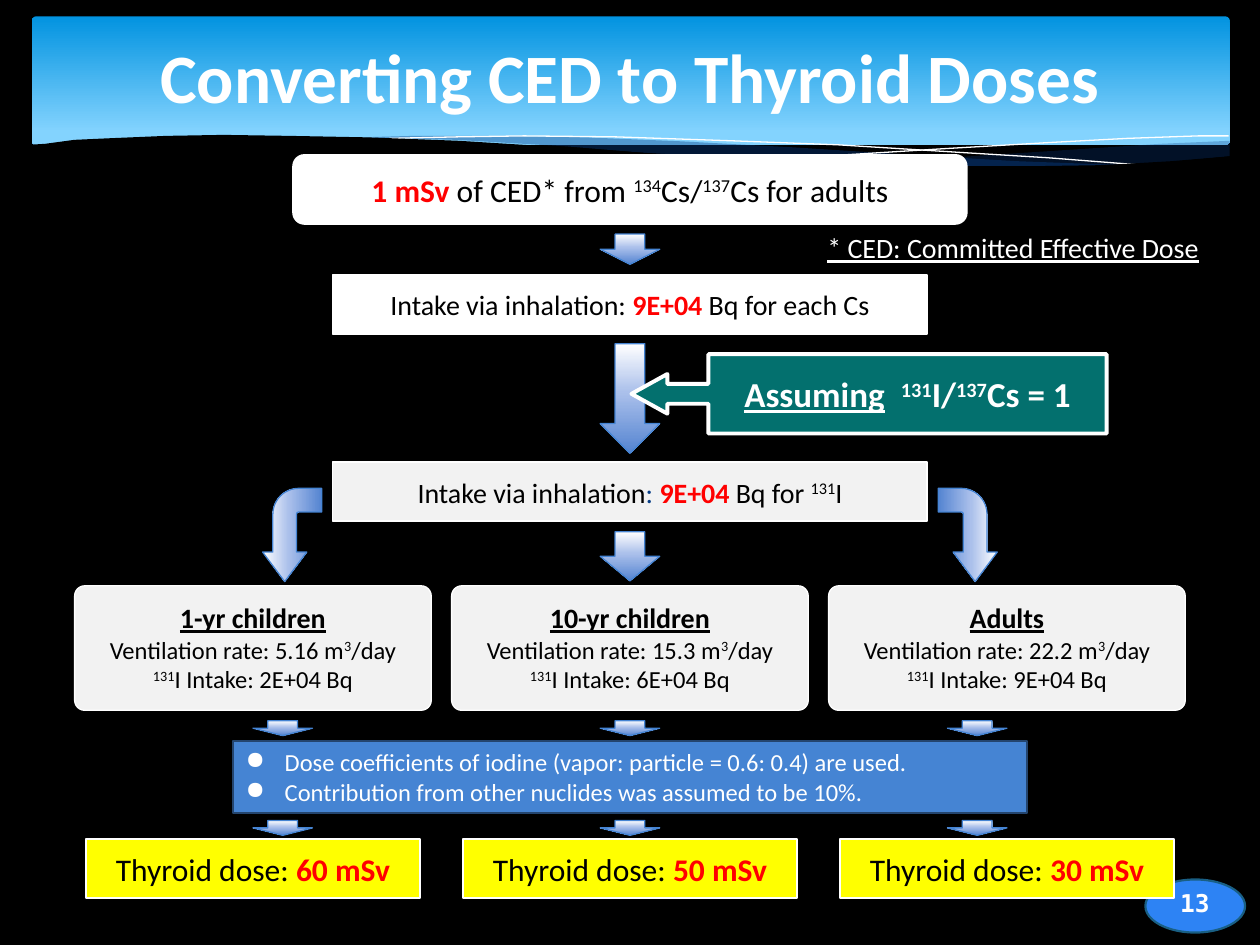
from copy import deepcopy

from lxml import etree
from pptx import Presentation, util as u
from pptx.dml import color
from pptx.enum import shapes as s, text as t
from pptx.oxml import ns

RED = dict(color="FF0000", bold=True)
SUP = dict(sup=True)
BLUES = [(0, "FFFFFF"), (0.44, "ABC0EB"), (1, "5484D1")]
SKY = [(0, "0293E0"), (0.9, "83D3FE")]

TITLE = "Converting CED to Thyroid Doses"
CED = [("1 mSv ", RED), "of CED* from ", ("134", SUP), "Cs/", ("137", SUP),
       "Cs for adults"]
CS_INTAKE = ["Intake via inhalation: ", ("9E+04 ", RED), "Bq for each Cs"]
RATIO = [("Assuming", dict(underline=True)), "  ", ("131", SUP), "I/",
         ("137", SUP), "Cs = 1"]
I_INTAKE = ["Intake via inhalation", (": ", dict(color="073E87")),
            ("9E+04 ", RED), "Bq for ", ("131", SUP), "I"]
GROUPS = [  # name, ventilation rate, iodine intake, thyroid dose
    ("1-yr children", "5.16", "2E+04", "60 mSv"),
    ("10-yr children", "15.3", "6E+04", "50 mSv"),
    ("Adults", "22.2", "9E+04", "30 mSv"),
]
ASSUMPTIONS = [
    ["Dose coefficients of iodine (vapor: particle = 0.6: 0.4) are used."],
    ["Contribution from other nuclides was assumed to be 10%."],
]
FOOTNOTE = "* CED: Committed Effective Dose"

# Banner curves, centimetres
RIGHT_WAVE = [(24.77, 2.84), (23.4, 2.9), (21.87, 3), (19.13, 3.18), (16.79, 3.28),
              (18.26, 3.33), (19.84, 3.36), (21.2, 3.36), (22.58, 3.33),
              (23.75, 3.25), (24.79, 3.15), (24.79, 2.84)]
MIDDLE_WAVE = [(22.68, 3.33), (20.5, 3.25), (18.82, 3.15), (15.98, 2.97),
               (13.74, 2.85), (11.81, 2.77), (10.13, 2.74), (8.33, 2.74),
               (7.26, 2.77), (9.19, 2.82), (11.4, 2.95), (13.46, 3.12),
               (15.27, 3.23), (16.89, 3.3), (18.7, 3.35), (20.5, 3.38), (21.77, 3.36)]
FALLING_LINE = [(7.85, 2.79), (9.22, 2.76), (10.57, 2.74), (12.42, 2.76),
                (14.78, 2.84), (16.89, 2.92), (19.3, 3.07), (21.11, 3.18), (23.04, 3.33)]
RISING_LINE = [(15.57, 3.23), (17.07, 3.12), (19, 3), (21.23, 2.87), (22.73, 2.79),
               (24.16, 2.74), (24.77, 2.74)]
BLACK_WAVE = [(24.82, 3.15), (23.62, 3.25), (22.23, 3.33), (20.9, 3.35), (18.9, 3.35),
              (16.97, 3.28), (14.71, 3.18), (12.78, 3.07), (11.35, 2.97), (9.27, 2.84),
              (7.42, 2.77), (5.84, 2.74), (4.5, 2.72), (3.35, 2.74), (2.16, 2.79),
              (1.5, 2.82), (0.91, 2.9), (0.58, 2.92), (0.58, 3.73), (24.82, 3.73)]

MIDDLE = 12.7
prs = Presentation()
prs.slide_width, prs.slide_height = u.Cm(25.4), u.Cm(19.05)
slide = prs.slides.add_slide(prs.slide_layouts[6])


def rgb(value):
    return color.RGBColor.from_string(value)


def paint(shape, fill=None, line=None, width=0.75, alpha=None):
    """Set fill (hex, list of gradient stops or None) and outline."""
    shape.shadow.inherit = False
    if fill is None:
        shape.fill.background()
    elif isinstance(fill, str):
        shape.fill.solid()
        shape.fill.fore_color.rgb = rgb(fill)
    else:
        shape.fill.gradient()
        shape.fill.gradient_angle = 270
        stop_list = shape._element.spPr.find(".//" + ns.qn("a:gsLst"))
        while len(stop_list) < len(fill):
            stop_list.append(deepcopy(stop_list[0]))
        for stop, (position, shade) in zip(shape.fill.gradient_stops, fill):
            stop.position = position
            stop.color.rgb = rgb(shade)
    if alpha:
        tint = shape._element.spPr.find(".//" + ns.qn("a:srgbClr"))
        etree.SubElement(tint, ns.qn("a:alpha")).set("val", str(alpha * 1000))
    if line:
        shape.line.color.rgb = rgb(line)
        shape.line.width = u.Pt(width)
    else:
        shape.line.fill.background()


def block(kind, x, y, w, h, adjust=(), **look):
    shape = slide.shapes.add_shape(kind, *map(u.Cm, (x, y, w, h)))
    for i, value in enumerate(adjust):
        shape.adjustments[i] = value
    paint(shape, **look)
    return shape


def centred(kind, y, w, h, centre=MIDDLE, **look):
    return block(kind, centre - w / 2, y, w, h, **look)


def arrow(y, h, centre=MIDDLE):
    centred(s.MSO_SHAPE.DOWN_ARROW, y, 1.2, h, centre, fill=BLUES, line="4584D3")


def curve(points, closed=True, **look):
    (x, y), *rest = [(a * 100, b * 100) for a, b in points]
    builder = slide.shapes.build_freeform(x, y, scale=u.Cm(0.01))
    builder.add_line_segments(rest, close=closed)
    paint(builder.convert_to_shape(), **look)


def write(shape, paragraphs, size=16, color="000000", bold=False, underline=False,
          font="Calibri", align="CENTER", anchor="MIDDLE", wrap=True, bullet=None):
    """Fill a shape with paragraphs; a run is a string or (string, overrides)."""
    frame = shape.text_frame
    frame.word_wrap = wrap
    frame.vertical_anchor = getattr(t.MSO_ANCHOR, anchor)
    for i, runs in enumerate(paragraphs):
        para = frame.add_paragraph() if i else frame.paragraphs[0]
        para.alignment = getattr(t.PP_ALIGN, align)
        if bullet:
            props = para._p.get_or_add_pPr()
            props.set("marL", str(u.Cm(0.79)))
            props.set("indent", str(-u.Cm(0.79)))
            etree.SubElement(props, ns.qn("a:buChar")).set("char", bullet)
        for item in runs:
            words, own = (item, {}) if isinstance(item, str) else item
            run = para.add_run()
            run.text = words
            run.font.name = font
            run.font.size = u.Pt(own.get("size", size))
            run.font.bold = own.get("bold", bold)
            run.font.underline = own.get("underline", underline)
            run.font.color.rgb = rgb(own.get("color", color))
            if own.get("sup"):
                run._r.get_or_add_rPr().set("baseline", "30000")


def label(x, y, w, h, words, **form):
    box = slide.shapes.add_textbox(*map(u.Cm, (x, y, w, h)))
    write(box, [[words]], color="FFFFFF", **form)


slide.background.fill.solid()
slide.background.fill.fore_color.rgb = rgb("000000")
RECT, ROUND = s.MSO_SHAPE.RECTANGLE, s.MSO_SHAPE.ROUNDED_RECTANGLE

# Banner, slide number and title
block(ROUND, 0.64, 0.33, 24.15, 2.59, adjust=[0.034], fill=SKY)
curve(RIGHT_WAVE, fill="073E87", alpha=29)
curve(MIDDLE_WAVE, fill="073E87", alpha=40)
for hairline in (FALLING_LINE, RISING_LINE):
    curve(hairline, closed=False, line="FFFFFF", width=0)
curve(BLACK_WAVE, fill="000000")
block(s.MSO_SHAPE.OVAL, 23.09, 17.73, 2.01, 1.07, fill="2D83F4", line="195F84", width=1.25)
label(23.44, 17.78, 1.3, 1.02, "13", size=14, bold=True, font="DejaVu Sans Mono",
      anchor="TOP")
label(1.27, 0.53, 22.86, 1.98, TITLE, size=39.6, bold=True)

# From CED to iodine intake
write(centred(ROUND, 3.12, 13.59, 1.4, fill="FFFFFF", line="FFFFFF"), [CED], size=18)
for top, fill, runs in ((5.54, "FFFFFF", CS_INTAKE), (9.32, "F2F2F2", I_INTAKE)):
    write(centred(RECT, top, 11.99, 1.19, fill=fill, line="FFFFFF", width=1), [runs])
for top, height in ((4.72, 0.61), (6.93, 2.21), (10.72, 0.99)):
    arrow(top, height)
write(block(s.MSO_SHAPE.LEFT_ARROW_CALLOUT, 12.73, 7.14, 9.58, 1.6,
            adjust=[0.25, 0.25, 0.453, 0.838], fill="03706E", line="FFFFFF", width=2.25),
      [RATIO], size=20, color="FFFFFF", bold=True)
for left, turn, flips in ((4.95, 90, ["flipV"]), (18.57, 270, ["flipH", "flipV"])):
    bend = block(s.MSO_SHAPE.BENT_ARROW, left, 10.19, 1.88, 1.19,
                 adjust=[0.401, 0.374, 0.5, 0.438], fill=BLUES, line="4584D3")
    bend.rotation = turn
    for flip in flips:
        bend._element.spPr.xfrm.set(flip, "1")

# One column per age group
for i, (name, rate, intake, dose) in enumerate(GROUPS):
    centre = MIDDLE + (i - 1) * 7.6
    centred(ROUND, 11.81, 7.19, 2.51, centre, adjust=[0.081], fill="F2F2F2", line="FFFFFF")
    write(centred(RECT, 11.99, 6.38, 2.13, centre, fill="F2F2F2"),
          [[(name, dict(size=16, bold=True, underline=True))],
           [f"Ventilation rate: {rate} m", ("3", SUP), "/day"],
           [("131", SUP), f"I Intake: {intake} Bq"]],
          size=14, anchor="TOP", wrap=False)
    for top in (14.53, 16.54):
        arrow(top, 0.3, MIDDLE + (i - 1) * 7)
    write(centred(RECT, 16.92, 6.73, 1.19, centre, fill="FFFF00", line="FFFFFF", width=1),
          [["Thyroid dose: ", (dose, RED)]], size=18)

write(centred(RECT, 14.94, 16, 1.45, fill="4584D3", line="24456E", width=1.25),
      ASSUMPTIONS, size=14, color="FFFFFF", align="LEFT", anchor="TOP", bullet="●")
label(16.43, 4.52, 8.26, 0.94, FOOTNOTE, underline=True, align="LEFT", anchor="TOP",
      wrap=False)

prs.save("out.pptx")
